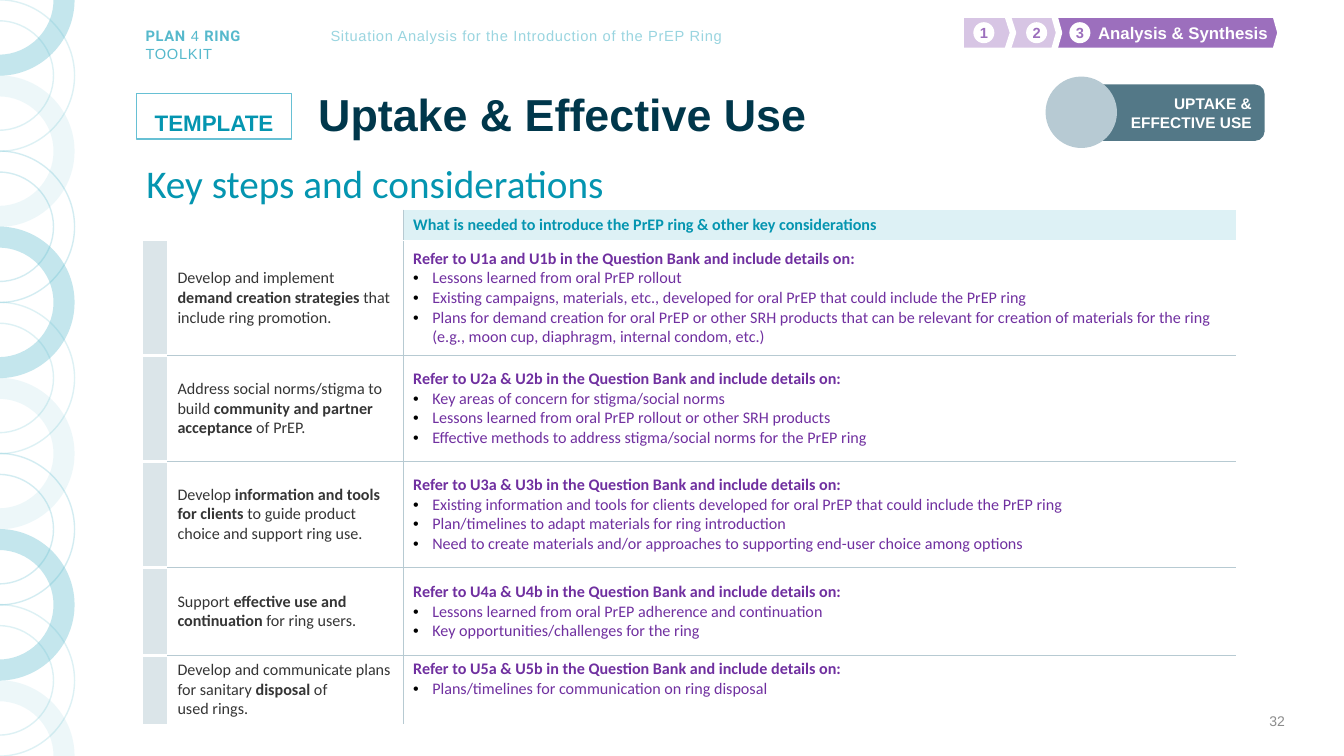
from lxml import etree
from pptx import Presentation
from pptx.dml.color import RGBColor
from pptx.enum.shapes import MSO_SHAPE
from pptx.enum.text import MSO_ANCHOR, PP_ALIGN
from pptx.oxml.ns import qn
from pptx.util import Cm, Pt

TOP, MIDDLE, BOTTOM = MSO_ANCHOR.TOP, MSO_ANCHOR.MIDDLE, MSO_ANCHOR.BOTTOM
CENTER, RIGHT = PP_ALIGN.CENTER, PP_ALIGN.RIGHT
RECT, OVAL = MSO_SHAPE.RECTANGLE, MSO_SHAPE.OVAL
PLATE, ROUNDED = MSO_SHAPE.PENTAGON, MSO_SHAPE.ROUNDED_RECTANGLE

WHITE, AQUA, TEAL, PURPLE = "FFFFFF", "56B9CC", "0495B0", "9C6FBD"
NAVY, SLATE, RULE, VIOLET = "00374B", "537887", "B7CAD2", "7030A0"
HARD_SPACE = chr(160)

# Content: ** encloses bold words
BRAND = "**PLAN** 4 **RING **TOOLKIT"
CONTEXT = "Situation Analysis for the Introduction of the PrEP Ring"
TAG = "**TEMPLATE**"
TITLE = "**Uptake & Effective Use**"
SUBTITLE = "Key steps and considerations"
BADGE = "**UPTAKE & EFFECTIVE USE**"
PAGE = "32"
# number, label, plate left, plate width, tip, fill opacity, circle left
STAGES = [
    ("3", "**Analysis & Synthesis**", 26.58, 5.69, 0.14, 100, 26.95),
    ("2", "", 25.37, 1.32, 0.14, 40, 25.86),
    ("1", "", 24.21, 1.32, 0.16, 40, 24.53),
]
HEADING = "**What is needed to introduce the PrEP ring & other key considerations**"
STEPS = [
    ("Develop and implement **demand creation strategies **that include ring promotion.",
     "U1a and U1b",
     ["Lessons learned from oral PrEP rollout",
      "Existing campaigns, materials, etc., developed for oral PrEP that could include the PrEP ring",
      "Plans for demand creation for oral PrEP or other SRH products that can be relevant for "
      "creation of materials for the ring (e.g., moon cup, diaphragm, internal condom, etc.)"]),
    ("Address social norms/stigma to build **community and partner acceptance** of PrEP.",
     "U2a & U2b",
     ["Key areas of concern for stigma/social norms",
      "Lessons learned from oral PrEP rollout or other SRH products",
      "Effective methods to address stigma/social norms for the PrEP ring"]),
    ("Develop **information and tools for clients **to guide product choice and support ring use.",
     "U3a & U3b",
     ["Existing information and tools for clients developed for oral PrEP that could include the PrEP ring",
      "Plan/timelines to adapt materials for ring introduction",
      "Need to create materials and/or approaches to supporting end-user choice among options"]),
    ("Support **effective use and continuation** for ring users.",
     "U4a & U4b",
     ["Lessons learned from oral PrEP adherence and continuation",
      "Key opportunities/challenges for the ring"]),
    (f"Develop and communicate plans for sanitary **disposal** of used{HARD_SPACE}rings.",
     "U5a & U5b",
     ["Plans/timelines for communication on ring disposal"]),
]
COLUMNS = [0.61, 5.94, 20.98]
ROWS = [0.78, 2.9, 2.67, 2.67, 2.22, 1.72]
# Repeating ring styles: kind, opacity
RINGS = [("fill", 35), ("line", 20), ("fill", 10), ("line", 25)]
RING_COUNT, RING_X, RING_OUTER, RING_INNER = 11, -0.03, 1.91, 1.38
CURVE = 0.55  # handle length of a quarter circle, as a share of its radius

deck = Presentation()
deck.slide_width, deck.slide_height = Cm(33.87), Cm(19.05)
slide = deck.slides.add_slide(deck.slide_layouts[6])
shapes = slide.shapes


def apply(target, values):
    for name, value in values.items():
        setattr(target, name, value)


def paint(fill, color, opacity=100):
    fill.solid()
    fill.fore_color.rgb = RGBColor.from_string(color)
    if opacity < 100:
        tone = fill._xPr.find(f"{qn('a:solidFill')}/{qn('a:srgbClr')}")
        etree.SubElement(tone, qn("a:alpha"), val=str(opacity * 1000))


def write(paragraph, text, color, size, font="Arial", bold_font=None, tracking=0, **layout):
    """Fill a paragraph, turning **words** into bold runs."""
    apply(paragraph, layout)
    for i, part in enumerate(text.split("**")):
        if part:
            run = paragraph.add_run()
            run.text = part
            bold = i % 2 == 1
            apply(run.font, {"size": Pt(size), "bold": bold,
                             "name": bold_font if bold and bold_font else font})
            paint(run.font.fill, color)
            if tracking:
                run._r.get_or_add_rPr().set("spc", str(tracking))


def add_text(box, text, color, size, anchor=TOP, **style):
    frame = shapes.add_textbox(*map(Cm, box)).text_frame
    apply(frame, {"word_wrap": True, "vertical_anchor": anchor})
    write(frame.paragraphs[0], text, color, size, **style)


def add_block(kind, box, color, opacity=100, line=None, width=1):
    block = shapes.add_shape(kind, *map(Cm, box))
    block.shadow.inherit = False
    paint(block.fill, color, opacity)
    if line:
        paint(block.line.fill, line)
        block.line.width = Pt(width)
    else:
        block.line.fill.background()
    return block


def add_ring(center, kind, opacity, upper, lower):
    """Draw the quarter rings right of the slide edge, above and below the center."""
    unit = [(0, -1), (CURVE, -1), (1, -CURVE), (1, 0), (1, CURVE), (CURVE, 1), (0, 1)]
    unit = unit[0 if upper else 3:7 if lower else 4]
    arc = [(RING_OUTER * x, RING_OUTER * y) for x, y in unit]
    arc += [(RING_INNER * x, RING_INNER * y) for x, y in reversed(unit)]
    points = [(Cm(RING_X + x), Cm(center + y)) for x, y in arc]
    outline = shapes.build_freeform(*points[0])
    outline.add_line_segments(points[1:])
    ring = outline.convert_to_shape()
    # Every three points of an arc become one curve; the joint between arcs stays straight
    steps = list(ring._element.iter(qn("a:lnTo")))
    side = len(unit) - 1
    for first in [*range(0, side, 3), *range(side + 1, 2 * side + 1, 3)]:
        curve = etree.Element(qn("a:cubicBezTo"))
        steps[first].addprevious(curve)
        for step in steps[first:first + 3]:
            curve.append(step[0])
            step.getparent().remove(step)
    ring.shadow.inherit = False
    if kind == "fill":
        paint(ring.fill, AQUA, opacity)
        ring.line.fill.background()
    else:
        ring.fill.background()
        paint(ring.line.fill, AQUA, opacity)
        ring.line.width = Pt(1)


def add_borders(cell, edges):
    """Edges come as (color, points) in the order left, right, top, bottom."""
    props = cell._tc.get_or_add_tcPr()
    for side, (color, points) in zip("LRTB", edges):
        line = etree.SubElement(props, qn(f"a:ln{side}"), w=str(Pt(points)))
        if color:
            solid = etree.SubElement(line, qn("a:solidFill"))
            etree.SubElement(solid, qn("a:srgbClr"), val=color)
        else:
            etree.SubElement(line, qn("a:noFill"))


def add_bullet(paragraph):
    props = paragraph._p.get_or_add_pPr()
    props.set("marL", str(Cm(0.48)))
    props.set("indent", str(-Cm(0.48)))
    tone = etree.SubElement(props, qn("a:buClr"))
    etree.SubElement(tone, qn("a:srgbClr"), val="000000")
    etree.SubElement(props, qn("a:buFont"), typeface="Arial")
    etree.SubElement(props, qn("a:buChar"), char="•")


# Header and ring border
add_text((3.42, 0.56, 4.67, 0.71), BRAND, AQUA, 10.5, bold_font="Roboto", tracking=50)
add_text((7.98, 0.56, 10.59, 0.71), CONTEXT, "9AD5E0", 10.5, tracking=50, alignment=CENTER)
for i in range(RING_COUNT):
    add_ring(19.05 * i / (RING_COUNT - 1), *RINGS[i % 4], i > 0, i < RING_COUNT - 1)

# Stage tracker
for number, label, left, width, tip, opacity, circle_left in STAGES:
    plate = add_block(PLATE, (left, 0.37, width, 0.91), PURPLE, opacity, WHITE, 4.5)
    plate.adjustments[0] = tip
    if label:
        plate.text_frame.vertical_anchor = MIDDLE
        write(plate.text_frame.paragraphs[0], label, WHITE, 12, alignment=RIGHT)
    circle = add_block(OVAL, (circle_left, 0.56, 0.53, 0.53), WHITE)
    apply(circle.text_frame, {"margin_left": 0, "margin_right": 0, "margin_top": 0,
                              "margin_bottom": 0, "vertical_anchor": MIDDLE, "word_wrap": False})
    write(circle.text_frame.paragraphs[0], f"**{number}**", PURPLE, 10.5, alignment=CENTER)

# Title area
tag = add_block(RECT, (3.44, 2.36, 3.91, 1.14), WHITE, line="67C0D4")
apply(tag.text_frame, {"margin_top": Cm(0.2), "margin_bottom": 0,
                       "vertical_anchor": MIDDLE, "word_wrap": False})
write(tag.text_frame.paragraphs[0], TAG, TEAL, 16, alignment=CENTER, line_spacing=1.15)
add_text((7.77, 2.26, 24.1, 1.42), TITLE, NAVY, 32, BOTTOM, line_spacing=0.9)
add_text((3.44, 3.78, 28.42, 1.32), SUBTITLE, TEAL, 28, font="Calibri", line_spacing=1.1)
add_text((25.01, 17.65, 7.62, 1.02), PAGE, "8C8C8C", 10, MIDDLE, alignment=RIGHT)

# Steps table
table = shapes.add_table(len(ROWS), len(COLUMNS), Cm(3.61), Cm(5.28),
                         Cm(sum(COLUMNS)), Cm(sum(ROWS))).table
apply(table, {"first_row": False, "horz_banding": False})
for column, width in zip(table.columns, COLUMNS):
    column.width = Cm(width)
for row, height in zip(table.rows, ROWS):
    row.height = Cm(height)

OPEN, THIN, GAP, HAIRLINE = (None, 0), (WHITE, 1), (WHITE, 2.25), (RULE, 1)


def row_edge(edge, column):
    """Style of the line above row number edge."""
    if edge in (0, len(ROWS)):
        return OPEN
    if edge == 1:
        return THIN
    return HAIRLINE if column else GAP


for r in range(len(ROWS)):
    for c in range(len(COLUMNS)):
        cell = table.cell(r, c)
        apply(cell, {"vertical_anchor": MIDDLE, "margin_top": Cm(0.1), "margin_bottom": Cm(0.1)})
        cell.text_frame.paragraphs[0].font.size = Pt(11.5)
        add_borders(cell, [HAIRLINE if c == 2 else OPEN,
                           HAIRLINE if c == 1 or (r, c) == (0, 0) else OPEN,
                           row_edge(r, c), row_edge(r + 1, c)])
        color = "DDF1F5" if (r, c) == (0, 2) else "DBE5E9" if r and c == 0 else None
        if color:
            paint(cell.fill, color)
        else:
            cell.fill.background()
table.cell(0, 0).merge(table.cell(0, 1))

write(table.cell(0, 2).text_frame.paragraphs[0], HEADING, TEAL, 11.5, "Calibri")
for r, (task, questions, details) in enumerate(STEPS, start=1):
    write(table.cell(r, 1).text_frame.paragraphs[0], task, "353535", 11.5, "Calibri")
    considerations = table.cell(r, 2).text_frame
    write(considerations.paragraphs[0],
          f"**Refer to {questions} in the Question Bank and include details on:**",
          VIOLET, 11.5, "Calibri")
    for detail in details:
        item = considerations.add_paragraph()
        add_bullet(item)
        write(item, detail, VIOLET, 11.5, "Calibri")
table.cell(len(STEPS), 2).vertical_anchor = TOP

# Topic badge
badge = add_block(ROUNDED, (27.42, 2.13, 4.45, 1.42), SLATE)
apply(badge.text_frame, {"vertical_anchor": MIDDLE, "word_wrap": True})
write(badge.text_frame.paragraphs[0], BADGE, WHITE, 11, alignment=RIGHT)
add_block(OVAL, (26.35, 1.93, 1.8, 1.8), "B7CAD3")

deck.save("out.pptx")
